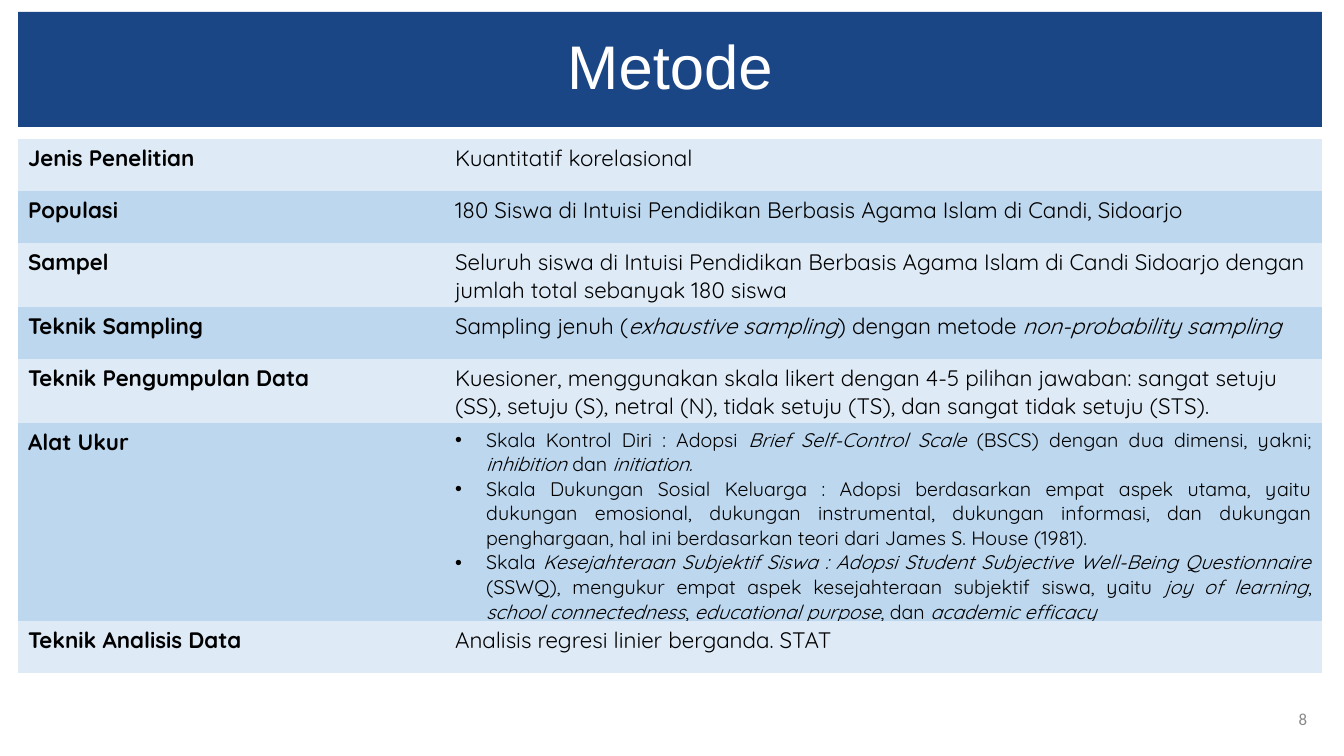
from pptx import Presentation
from pptx.dml.color import RGBColor
from pptx.enum.shapes import MSO_SHAPE
from pptx.enum.text import MSO_ANCHOR, PP_ALIGN
from pptx.oxml.ns import qn
from pptx.util import Pt
from lxml.etree import SubElement

EMU_PER_PX = 914400 / 100.8
NAVY = RGBColor(0x1B, 0x46, 0x85)
PALE_BLUE = RGBColor(0xDE, 0xEB, 0xF7)
LIGHT_BLUE = RGBColor(0xBD, 0xD7, 0xEE)
BLACK = RGBColor(0, 0, 0)
WHITE = RGBColor(0xFF, 0xFF, 0xFF)
GRAY = RGBColor(0x88, 0x88, 0x88)
BODY_FONT = "Quicksand"
PLAIN_TABLE_STYLE = "{2D5ABB26-0587-4C30-8999-92F81FD0307C}"
BULLET_INDENT = 31

COLUMN_WIDTHS = [427, 877]
METHOD_ROWS = [
    (52, "Jenis Penelitian", "Kuantitatif korelasional"),
    (52, "Populasi", "180 Siswa di Intuisi Pendidikan Berbasis Agama Islam di Candi, Sidoarjo"),
    (52, "Sampel", "Seluruh siswa di Intuisi Pendidikan Berbasis Agama Islam di Candi Sidoarjo "
     "dengan jumlah total sebanyak 180 siswa"),
    (52, "Teknik Sampling",
     "Sampling jenuh (*exhaustive sampling*) dengan metode *non-probability sampling*"),
    (61, "Teknik Pengumpulan Data",
     "Kuesioner, menggunakan skala likert dengan 4-5 pilihan jawaban: sangat setuju (SS), "
     "setuju (S), netral (N), tidak setuju (TS), dan sangat tidak setuju (STS)."),
    (141, "Alat Ukur", [
        "Skala Kontrol Diri : Adopsi *Brief Self-Control Scale* (BSCS) dengan dua dimensi, "
        "yakni; *inhibition* dan *initiation.*",
        "Skala Dukungan Sosial Keluarga : Adopsi berdasarkan empat aspek utama, yaitu dukungan "
        "emosional, dukungan instrumental, dukungan informasi, dan dukungan penghargaan, "
        "hal ini berdasarkan teori dari James S. House (1981).",
        "Skala *Kesejahteraan Subjektif Siswa : Adopsi Student Subjective Well-Being "
        "Questionnaire* (SSWQ), mengukur empat aspek kesejahteraan subjektif siswa, yaitu "
        "*joy of learning*, *school connectedness*, *educational purpose*, dan *academic efficacy*",
    ]),
    (52, "Teknik Analisis Data", "Analisis regresi linier berganda. STAT"),
]


def px(length):
    return round(length * EMU_PER_PX)


def style_font(font, name, size, color, bold=False, italic=False):
    font.name = name
    font.size = Pt(size)
    font.color.rgb = color
    font.bold = bold
    font.italic = italic


def write_marked(para, text, size, bold=False):
    for index, part in enumerate(text.split("*")):
        if part:
            span = para.add_run()
            span.text = part
            style_font(span.font, BODY_FONT, size, BLACK, bold, italic=index % 2 == 1)


def add_bullet(para):
    para.alignment = PP_ALIGN.JUSTIFY
    properties = para._p.get_or_add_pPr()
    properties.set("marL", str(px(BULLET_INDENT)))
    properties.set("indent", str(-px(BULLET_INDENT)))
    color = SubElement(properties, qn("a:buClr"))
    SubElement(color, qn("a:srgbClr"), val=str(BLACK))
    SubElement(properties, qn("a:buFont"), typeface="Arial")
    SubElement(properties, qn("a:buChar"), char="•")


def fill_cell(cell, content, color, bold=False):
    cell.fill.solid()
    cell.fill.fore_color.rgb = color
    frame = cell.text_frame
    if isinstance(content, str):
        write_marked(frame.paragraphs[0], content, 16, bold)
        return
    for index, item in enumerate(content):
        para = frame.add_paragraph() if index else frame.paragraphs[0]
        add_bullet(para)
        write_marked(para, item, 14)


def add_title(page, text):
    box = page.shapes.add_shape(MSO_SHAPE.RECTANGLE, px(18), px(12), px(1304), px(115))
    box.shadow.inherit = False
    box.fill.solid()
    box.fill.fore_color.rgb = NAVY
    box.line.fill.background()
    box.text_frame.text = text
    box.text_frame.vertical_anchor = MSO_ANCHOR.MIDDLE
    para = box.text_frame.paragraphs[0]
    para.alignment = PP_ALIGN.CENTER
    para.line_spacing = 0.9
    style_font(para.runs[0].font, "Arial", 44, WHITE)


def add_method_table(page):
    heights = [height for height, _, _ in METHOD_ROWS]
    frame = page.shapes.add_table(len(METHOD_ROWS), len(COLUMN_WIDTHS), px(18), px(139),
                                  px(sum(COLUMN_WIDTHS)), px(sum(heights)))
    table = frame.table
    table.first_row = False
    table.horz_banding = False
    for style in table._tbl.iter(qn("a:tableStyleId")):
        style.text = PLAIN_TABLE_STYLE
    for column, width in zip(table.columns, COLUMN_WIDTHS):
        column.width = px(width)
    for index, (height, label, content) in enumerate(METHOD_ROWS):
        table.rows[index].height = px(height)
        color = LIGHT_BLUE if index % 2 else PALE_BLUE
        fill_cell(table.cell(index, 0), label, color, bold=True)
        fill_cell(table.cell(index, 1), content, color)


def add_page_number(page, text):
    box = page.shapes.add_textbox(px(1260), px(699), px(57), px(40))
    box.text_frame.word_wrap = True
    box.text_frame.vertical_anchor = MSO_ANCHOR.MIDDLE
    box.text_frame.text = text
    para = box.text_frame.paragraphs[0]
    para.alignment = PP_ALIGN.RIGHT
    style_font(para.runs[0].font, "Calibri", 12, GRAY)


def main():
    deck = Presentation()
    deck.slide_width = px(1344)
    deck.slide_height = px(756)
    page = deck.slides.add_slide(deck.slide_layouts[6])
    add_page_number(page, "8")
    add_title(page, "Metode")
    add_method_table(page)
    deck.save("out.pptx")


if __name__ == "__main__":
    main()
